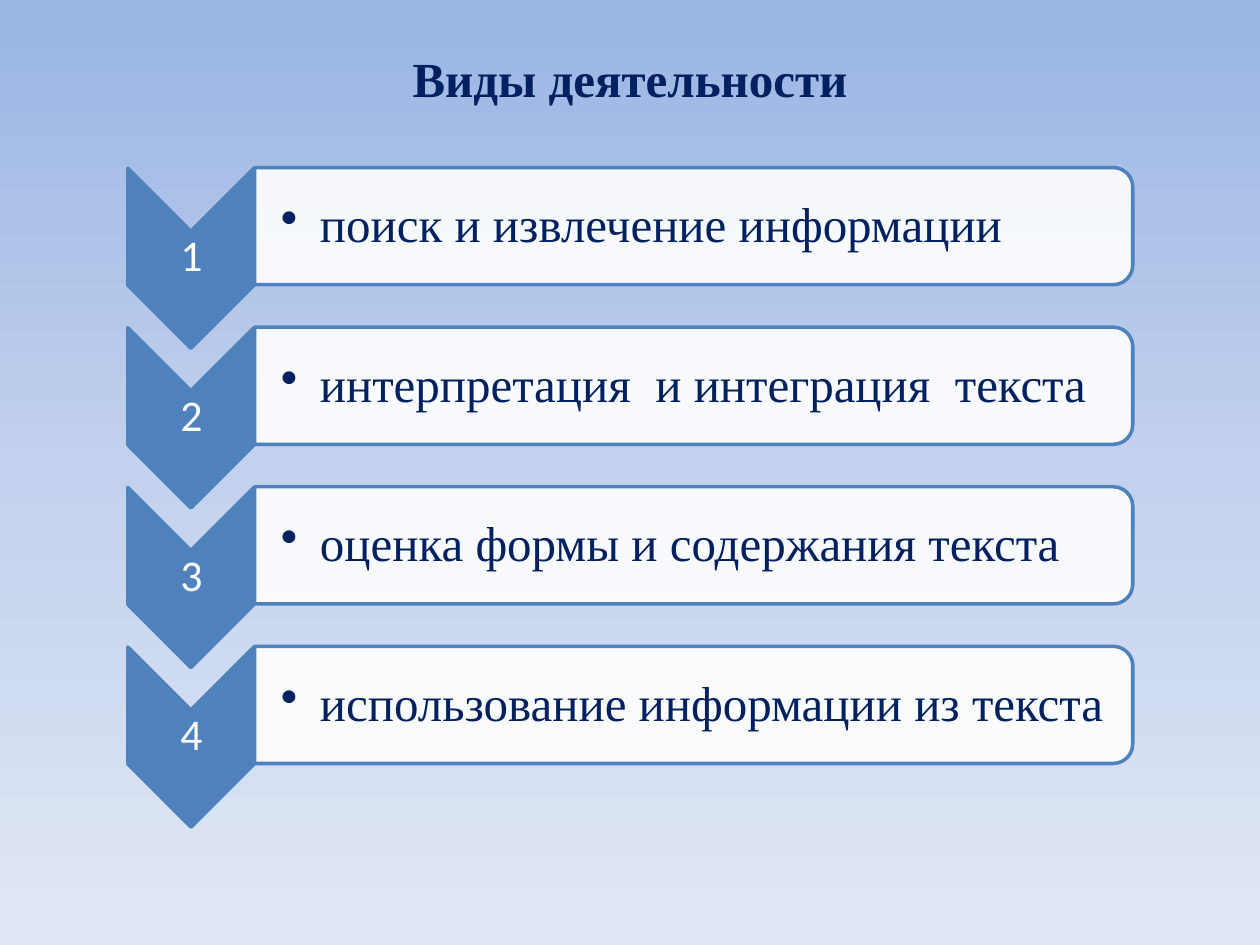
"""Build a slide listing four reading activities beside numbered chevrons."""
from copy import deepcopy

from lxml import etree
from pptx import Presentation
from pptx.dml.color import RGBColor
from pptx.enum.shapes import MSO_SHAPE
from pptx.enum.text import MSO_ANCHOR, PP_ALIGN
from pptx.oxml.ns import qn
from pptx.util import Inches, Pt

TITLE = "Виды деятельности"
ACTIVITIES = [
    "поиск и извлечение информации",
    "интерпретация  и интеграция  текста",
    "оценка формы и содержания текста",
    "использование информации из текста",
]

BLUE = RGBColor(0x4F, 0x81, 0xBD)
NAVY = RGBColor(0x00, 0x20, 0x60)
WHITE = RGBColor(0xFF, 0xFF, 0xFF)
SKY = [
    (0, RGBColor(0x9A, 0xB5, 0xE4)),
    (0.5, RGBColor(0xC2, 0xD1, 0xED)),
    (1, RGBColor(0xE1, 0xE8, 0xF5)),
]
SERIF = "Times New Roman"
SANS = "Calibri"
CHEVRON = MSO_SHAPE.CHEVRON
PANEL = MSO_SHAPE.ROUND_2_SAME_RECTANGLE
MIDDLE = MSO_ANCHOR.MIDDLE
CENTER = PP_ALIGN.CENTER

ROW_PITCH = 3.8 / 3
INSET = 0.02
BULLET_INDENT = Inches(0.31)


def paint_background(slide):
    fill = slide.background.fill
    fill.gradient()
    fill.gradient_angle = 270
    first = fill.gradient_stops[0]._gs
    first.addnext(deepcopy(first))
    for stop, (position, color) in zip(fill.gradient_stops, SKY):
        stop.color.rgb = color
        stop.position = position


def add_turned_shape(slide, kind, left, top, width, height, color):
    shape = slide.shapes.add_shape(
        kind, Inches(left), Inches(top), Inches(width), Inches(height))
    shape.rotation = 90
    shape.shadow.inherit = False
    shape.fill.solid()
    shape.fill.fore_color.rgb = color
    shape.line.color.rgb = BLUE
    shape.line.width = Pt(2)
    return shape


def add_label(slide, box, text, font, size, color, insets=None):
    frame = slide.shapes.add_textbox(*map(Inches, box)).text_frame
    frame.word_wrap = True
    frame.vertical_anchor = MIDDLE
    if insets:
        (frame.margin_left, frame.margin_top,
         frame.margin_right, frame.margin_bottom) = map(Inches, insets)
    paragraph = frame.paragraphs[0]
    paragraph.text = text
    paragraph.font.name = font
    paragraph.font.size = Pt(size)
    paragraph.font.color.rgb = color
    return paragraph


def add_bullet(paragraph):
    properties = paragraph._p.get_or_add_pPr()
    properties.set("marL", str(BULLET_INDENT))
    properties.set("indent", str(-BULLET_INDENT))
    bullet = etree.Element(qn("a:buChar"), char="•")
    properties.find(qn("a:lnSpc")).addnext(bullet)


def add_activity(slide, index, activity):
    offset = index * ROW_PITCH
    add_turned_shape(slide, CHEVRON, 0.8, 1.55 + offset, 1.43, 1, BLUE)
    number = add_label(slide, (1.02, 1.83 + offset, 1, 0.43), str(index + 1),
                       SANS, 25, WHITE, [INSET] * 4)
    number.alignment = CENTER
    number.line_spacing = 0.9

    panel = add_turned_shape(
        slide, PANEL, 5.04, -1.69 + offset, 0.93, 6.97, WHITE)
    color = panel.fill._xPr.find(qn("a:solidFill"))[0]
    etree.SubElement(color, qn("a:alpha"), val="90000")
    wording = add_label(slide, (2.01, 1.38 + offset, 6.93, 0.84), activity,
                        SERIF, 28, NAVY, [0.22] + [INSET] * 3)
    wording.line_spacing = 0.9
    add_bullet(wording)


def main():
    deck = Presentation()
    deck.slide_width, deck.slide_height = Inches(10), Inches(7.5)
    slide = deck.slides.add_slide(deck.slide_layouts[6])
    paint_background(slide)
    for index, activity in enumerate(ACTIVITIES):
        add_activity(slide, index, activity)
    title = add_label(slide, (0.5, 0.3, 9, 0.64), TITLE, SERIF, 28, NAVY)
    title.alignment = CENTER
    title.font.bold = True
    deck.save("out.pptx")


if __name__ == "__main__":
    main()
